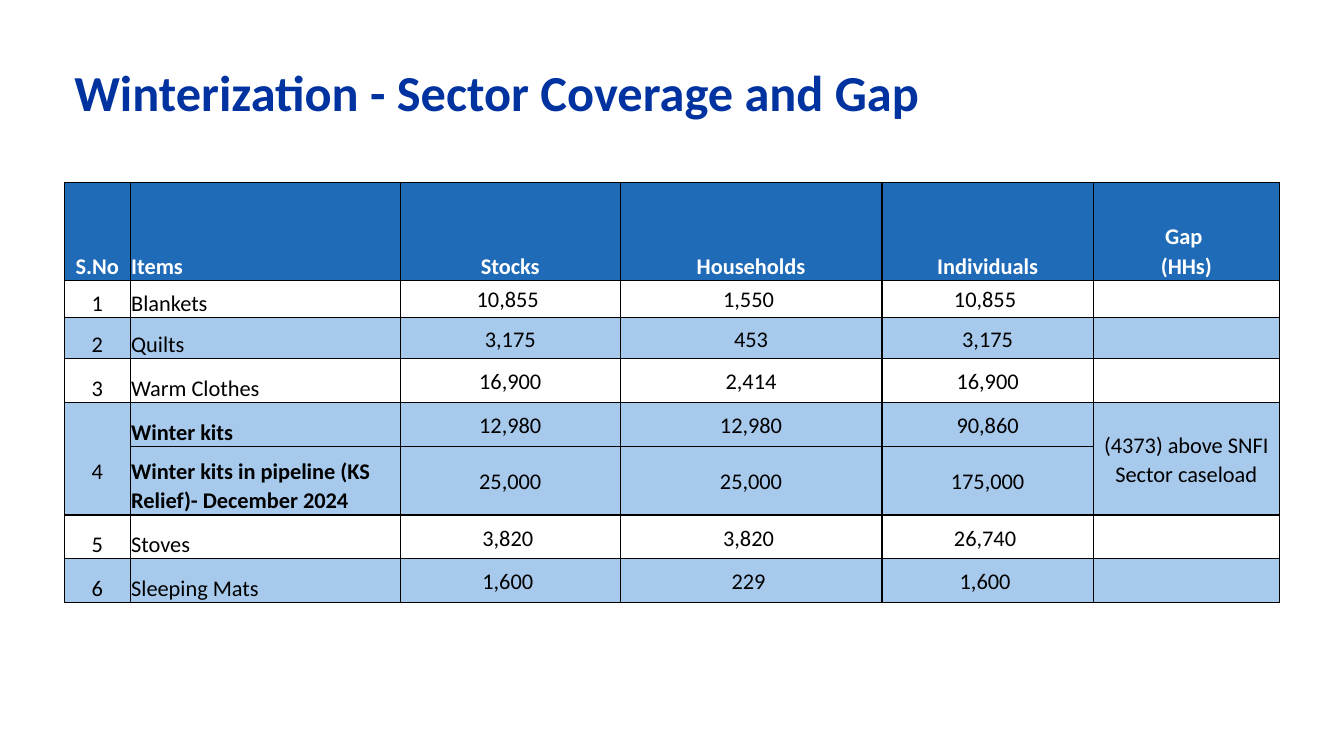
from lxml.etree import SubElement
from pptx import Presentation
from pptx.dml.color import RGBColor
from pptx.enum.text import MSO_ANCHOR as Anchor, PP_ALIGN as Align
from pptx.oxml.ns import qn
from pptx.util import Pt

NAVY = RGBColor(0x00, 0x33, 0xA0)
BLUE = RGBColor(0x20, 0x6B, 0xB7)
PALE = RGBColor(0xA6, 0xC9, 0xEC)
WHITE = RGBColor(0xFF, 0xFF, 0xFF)
BLACK = RGBColor(0x00, 0x00, 0x00)

# Table content; None marks a cell covered by the one above
HEAD = ["S.No", "Items", "Stocks", "Households", "Individuals", "Gap \n(HHs)"]
ROWS = [
    ["1", "Blankets", "10,855 ", "1,550 ", "10,855 ", ""],
    ["2", "Quilts", "3,175", "453", "3,175", ""],
    ["3", "Warm Clothes", "16,900", "2,414", "16,900", ""],
    ["4", "Winter kits", "12,980", "12,980", "90,860",
     "(4373) above SNFI Sector caseload"],
    [None, "Winter kits in pipeline (KS Relief)- December 2024",
     "25,000", "25,000", "175,000", None],
    ["5", "Stoves", "3,820 ", "3,820 ", "26,740 ", ""],
    ["6", "Sleeping Mats", "1,600 ", "229 ", "1,600 ", ""],
]
FILLS = [BLUE, WHITE, PALE, WHITE, PALE, PALE, WHITE, PALE]
WIDTHS = [47, 193, 157, 187, 151, 133]
HEIGHTS = [69.6, 26.8, 29.2, 31.4, 31.4, 49, 31.4, 31.4]


class Deck:
    """Holds the style and the current slide."""

    def __init__(self):
        self.font = "Calibri"
        self.prs = Presentation()
        self.prs.slide_width, self.prs.slide_height = Pt(960), Pt(540)
        self.slide = self.prs.slides.add_slide(self.prs.slide_layouts[6])

    def words(self, frame, text, size, color, bold, align, gap):
        frame.text = text
        for para in frame.paragraphs:
            para.alignment, para.line_spacing = align, gap
            for run in para.runs:
                look = {"name": self.font, "size": Pt(size), "bold": bold}
                for key, val in look.items():
                    setattr(run.font, key, val)
                run.font.color.rgb = color

    def title(self, text, left, top, width, height):
        box = self.slide.shapes.add_textbox(
            Pt(left), Pt(top), Pt(width), Pt(height))
        frame = box.text_frame
        frame.word_wrap = True
        frame.vertical_anchor = Anchor.MIDDLE
        self.words(frame, text, 36, NAVY, True, Align.LEFT, 0.9)

    def border(self, cell):
        props = cell._tc.get_or_add_tcPr()
        for side in ("a:lnL", "a:lnR", "a:lnT", "a:lnB"):
            line = SubElement(props, qn(side), w=str(Pt(1)))
            fill = SubElement(line, qn("a:solidFill"))
            SubElement(fill, qn("a:srgbClr"), val=str(BLACK))

    def cell(self, cell, text, fill, anchor, **style):
        edges = {"margin_left": Pt(0.7), "margin_right": Pt(0.7),
                 "margin_top": Pt(0.7), "margin_bottom": 0,
                 "vertical_anchor": anchor}
        for key, val in edges.items():
            setattr(cell, key, val)
        self.border(cell)
        cell.fill.solid()
        cell.fill.fore_color.rgb = fill
        if text:
            self.words(cell.text_frame, text, 16, gap=1.07, **style)

    def table(self, rows, left, top):
        table = self.slide.shapes.add_table(
            len(rows), len(WIDTHS), Pt(left), Pt(top),
            Pt(sum(WIDTHS)), Pt(sum(HEIGHTS))).table
        table.first_row = table.horz_banding = False
        for col, width in zip(table.columns, WIDTHS):
            col.width = Pt(width)
        for row, height in zip(table.rows, HEIGHTS):
            row.height = Pt(height)
        for r, row in enumerate(rows):
            for c, text in enumerate(row):
                head = r == 0
                low = head or c < 2
                self.cell(
                    table.cell(r, c), text, FILLS[r],
                    Anchor.BOTTOM if low else Anchor.MIDDLE,
                    color=WHITE if head else BLACK,
                    bold=head or (c == 1 and text.startswith("Winter")),
                    align=Align.LEFT if c == 1 else Align.CENTER)
                if text is None:
                    table.cell(r - 1, c).merge(table.cell(r, c))
        return table


def main():
    deck = Deck()
    # Heading
    deck.title("Winterization - Sector Coverage and Gap", 46, 28, 868, 80)
    # Coverage table, with the merged number raised one line
    table = deck.table([HEAD] + ROWS, 46, 130.5)
    table.cell(4, 0).margin_bottom = Pt(21)
    deck.prs.save("out.pptx")


if __name__ == "__main__":
    main()
